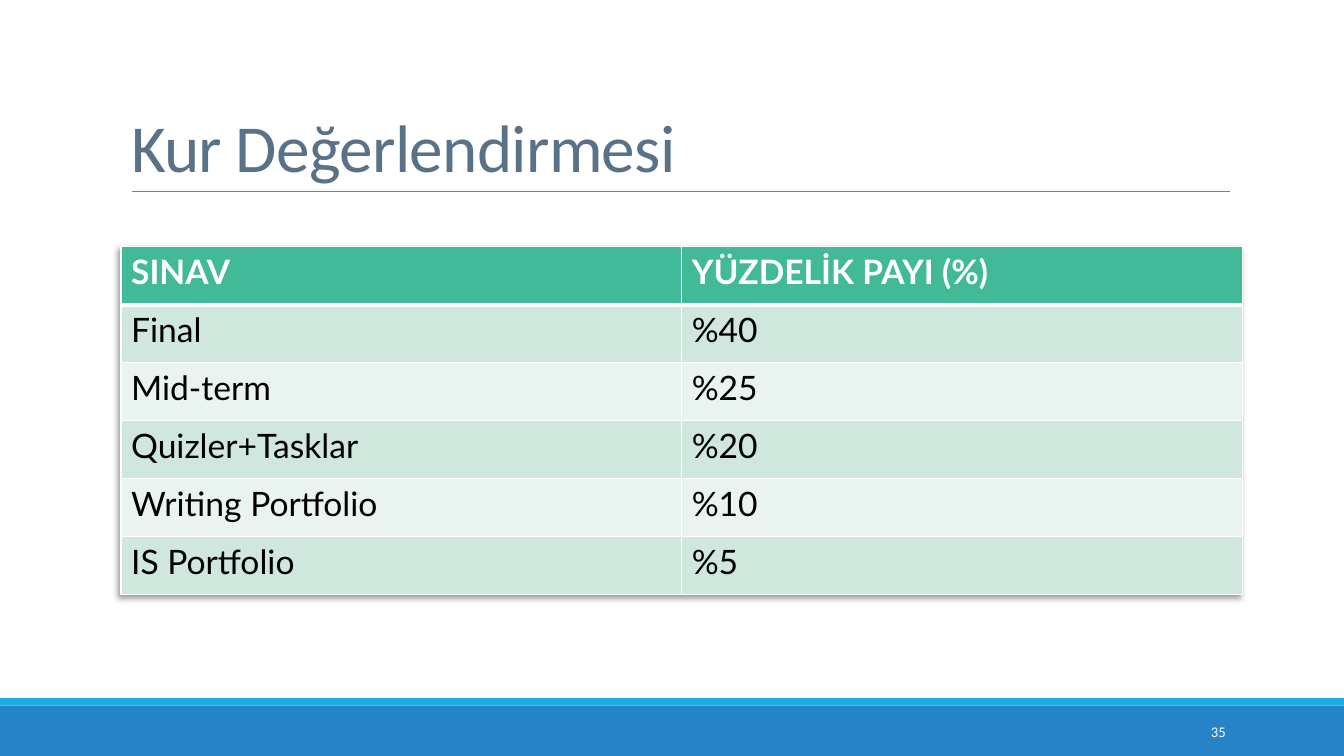
from dataclasses import dataclass

from lxml import etree
from pptx import Presentation
from pptx.dml.color import RGBColor
from pptx.enum import shapes, text
from pptx.oxml import parse_xml
from pptx.oxml.ns import nsdecls, qn
from pptx.util import Cm, Pt


@dataclass(frozen=True)
class Theme:
    heading_font: str = "Calibri"
    table_font: str = "Lato"
    title: str = "597287"
    rule: str = "808080"
    header: str = "42BA97"
    bands: tuple[str, str] = ("CFE7DD", "E9F3EF")
    white: str = "FFFFFF"
    black: str = "000000"
    title_size: float = 48
    table_size: float = 24
    number_size: float = 10.5


@dataclass(frozen=True)
class Bar:
    top: float
    height: float
    color: str


THEME = Theme()
WIDTH, HEIGHT = 33.87, 19.05
BARS = [Bar(17.78, 1.27, "2683C6"), Bar(17.59, 0.19, "1CADE4")]
ROWS = [
    ("SINAV", "YÜZDELİK PAYI (%)"),
    ("Final", "%40"),
    ("Mid-term", "%25"),
    ("Quizler+Tasklar", "%20"),
    ("Writing Portfolio", "%10"),
    ("IS Portfolio", "%5"),
]
COLUMN_WIDTH, ROW_HEIGHT = 14.13, 1.46


def rgb(color: str) -> RGBColor:
    return RGBColor.from_string(color)


def format_font(paragraph, name: str, size: float, color: str, bold: bool = False) -> None:
    font = paragraph.font
    font.name, font.size, font.bold = name, Pt(size), bold
    font.color.rgb = rgb(color)


def draw_bar(slide, bar: Bar) -> None:
    shape = slide.shapes.add_shape(
        shapes.MSO_SHAPE.RECTANGLE, 0, Cm(bar.top), Cm(WIDTH), Cm(bar.height))
    shape.shadow.inherit = False
    shape.fill.solid()
    shape.fill.fore_color.rgb = rgb(bar.color)
    shape.line.fill.background()


def draw_rule(slide) -> None:
    rule = slide.shapes.add_connector(
        shapes.MSO_CONNECTOR.STRAIGHT, Cm(3.32), Cm(4.82), Cm(31), Cm(4.82))
    rule.line.color.rgb = rgb(THEME.rule)
    rule.line.width = Pt(0.5)
    etree.SubElement(rule._element.spPr, qn("a:effectLst"))


def draw_title(slide, wording: str) -> None:
    title = slide.shapes.title
    title.left, title.top, title.width, title.height = Cm(3.05), Cm(0.79), Cm(27.94), Cm(4.04)
    frame = title.text_frame
    frame.text = wording
    frame.auto_size = text.MSO_AUTO_SIZE.NONE
    frame.vertical_anchor = text.MSO_ANCHOR.BOTTOM
    paragraph = frame.paragraphs[0]
    paragraph.alignment = text.PP_ALIGN.LEFT
    paragraph.line_spacing = 0.85
    format_font(paragraph, THEME.heading_font, THEME.title_size, THEME.title)
    paragraph.runs[0].font._element.set("spc", "-50")


def set_borders(cell, top: float, bottom: float) -> None:
    properties = cell._tc.get_or_add_tcPr()
    widths = {"lnL": 1, "lnR": 1, "lnT": top, "lnB": bottom}
    for position, (side, width) in enumerate(widths.items()):
        properties.insert(position, parse_xml(
            f'<a:{side} {nsdecls("a")} w="{Pt(width)}"><a:solidFill>'
            f'<a:srgbClr val="{THEME.white}"/></a:solidFill></a:{side}>'))


def draw_table(slide) -> None:
    columns = len(ROWS[0])
    table = slide.shapes.add_table(
        len(ROWS), columns, Cm(3.05), Cm(6.22),
        Cm(COLUMN_WIDTH * columns), Cm(ROW_HEIGHT * len(ROWS))).table
    # Soft shadow towards the lower left
    table._tbl.tblPr.insert(0, parse_xml(
        f'<a:effectLst {nsdecls("a")}><a:outerShdw blurRad="50800" dist="38100" '
        'dir="8100000" algn="tr" rotWithShape="0"><a:prstClr val="black">'
        '<a:alpha val="40000"/></a:prstClr></a:outerShdw></a:effectLst>'))
    for row, values in enumerate(ROWS):
        is_header = row == 0
        for column, value in enumerate(values):
            cell = table.cell(row, column)
            cell.text = value
            cell.fill.solid()
            cell.fill.fore_color.rgb = rgb(
                THEME.header if is_header else THEME.bands[(row - 1) % 2])
            format_font(cell.text_frame.paragraphs[0], THEME.table_font, THEME.table_size,
                        THEME.white if is_header else THEME.black, is_header)
            set_borders(cell, top=3 if row == 1 else 1, bottom=3 if is_header else 1)


def draw_slide_number(slide, number: str) -> None:
    box = slide.shapes.add_textbox(Cm(27.51), Cm(17.93), Cm(3.63), Cm(1.02))
    frame = box.text_frame
    frame.text = number
    frame.word_wrap = True
    frame.vertical_anchor = text.MSO_ANCHOR.MIDDLE
    paragraph = frame.paragraphs[0]
    paragraph.alignment = text.PP_ALIGN.RIGHT
    format_font(paragraph, THEME.heading_font, THEME.number_size, THEME.white)


def main() -> None:
    presentation = Presentation()
    presentation.slide_width, presentation.slide_height = Cm(WIDTH), Cm(HEIGHT)
    slide = presentation.slides.add_slide(presentation.slide_layouts[5])

    # Footer bars and title rule
    for bar in BARS:
        draw_bar(slide, bar)
    draw_rule(slide)

    # Content
    draw_title(slide, "Kur Değerlendirmesi")
    draw_table(slide)
    draw_slide_number(slide, "35")
    presentation.save("out.pptx")


if __name__ == "__main__":
    main()
